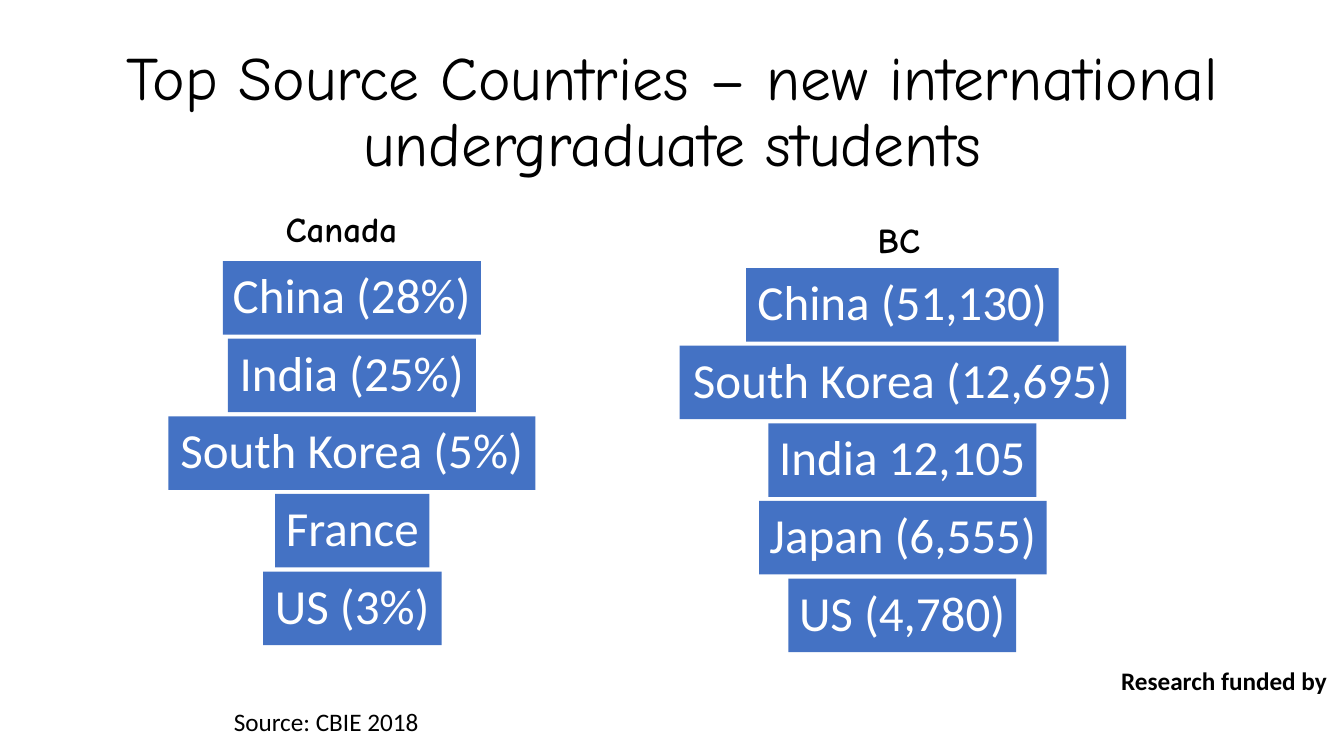
import pptx
import pptx.util
import pptx.dml.color
import pptx.enum.shapes
import pptx.enum.text

SCALE = 9144
ALIGN = pptx.enum.text.PP_ALIGN
ANCHOR = pptx.enum.text.MSO_ANCHOR


def px(size):
    return pptx.util.Emu(size * SCALE)


def color(code):
    return pptx.dml.color.RGBColor.from_string(code)


def write(frame, text, size=18, face="Calibri", ink="000000", bold=False,
          align=ALIGN.LEFT, anchor=ANCHOR.TOP, space=1.0, wrap=True):
    frame.word_wrap = wrap
    frame.auto_size = pptx.enum.text.MSO_AUTO_SIZE.NONE
    frame.vertical_anchor = anchor
    para = frame.paragraphs[0]
    para.alignment = align
    para.line_spacing = space
    run = para.add_run()
    run.text = text
    run.font.size = pptx.util.Pt(size)
    run.font.name = face
    run.font.bold = bold
    run.font.color.rgb = color(ink)


class Deck:
    head = "Comic Neue"
    fill = "4472C4"
    ink = "FFFFFF"
    tall = 73
    step = 77

    def __init__(self):
        self.file = pptx.Presentation()
        self.file.slide_width = px(1333)
        self.file.slide_height = px(750)
        self.slide = self.file.slides.add_slide(self.file.slide_layouts[5])

    def title(self, text, left, top, width, height):
        shape = self.slide.shapes.title
        shape.left, shape.top = px(left), px(top)
        shape.width, shape.height = px(width), px(height)
        write(shape.text_frame, text, size=44, face=self.head,
              align=ALIGN.CENTER, anchor=ANCHOR.MIDDLE, space=0.9)

    def label(self, text, left, top, width, height, **style):
        box = self.slide.shapes.add_textbox(
            px(left), px(top), px(width), px(height))
        write(box.text_frame, text, **style)

    def bar(self, text, mid, top, width):
        shape = self.slide.shapes.add_shape(
            pptx.enum.shapes.MSO_SHAPE.RECTANGLE,
            px(mid - width // 2), px(top), px(width), px(self.tall))
        shape.shadow.inherit = False
        shape.fill.solid()
        shape.fill.fore_color.rgb = color(self.fill)
        shape.line.fill.background()
        write(shape.text_frame, text, size=35, ink=self.ink, wrap=False,
              align=ALIGN.CENTER, anchor=ANCHOR.MIDDLE, space=0.9)

    def stack(self, name, left, high, mid, top, bars):
        self.label(name, left, high, 163, 52, size=25, face=self.head,
                   bold=True, align=ALIGN.CENTER)
        for row, (text, width) in enumerate(bars):
            self.bar(text, mid, top + row * self.step, width)


def main():
    deck = Deck()
    deck.title("Top Source Countries – new international undergraduate students",
               92, 40, 1150, 145)
    deck.stack("Canada", 257, 201, 349, 259, [
        ("China (28%)", 256),
        ("India (25%)", 246),
        ("South Korea (5%)", 364),
        ("France", 153),
        ("US (3%)", 177),
    ])
    deck.stack("BC", 810, 212, 895, 266, [
        ("China (51,130)", 310),
        ("South Korea (12,695)", 443),
        ("India 12,105", 266),
        ("Japan (6,555)", 285),
        ("US (4,780)", 226),
    ])
    deck.label("Source: CBIE 2018", 222, 696, 741, 40)
    deck.label("Research funded by", 1026, 655, 300, 40,
               bold=True, align=ALIGN.RIGHT)
    deck.file.save("out.pptx")


if __name__ == "__main__":
    main()
